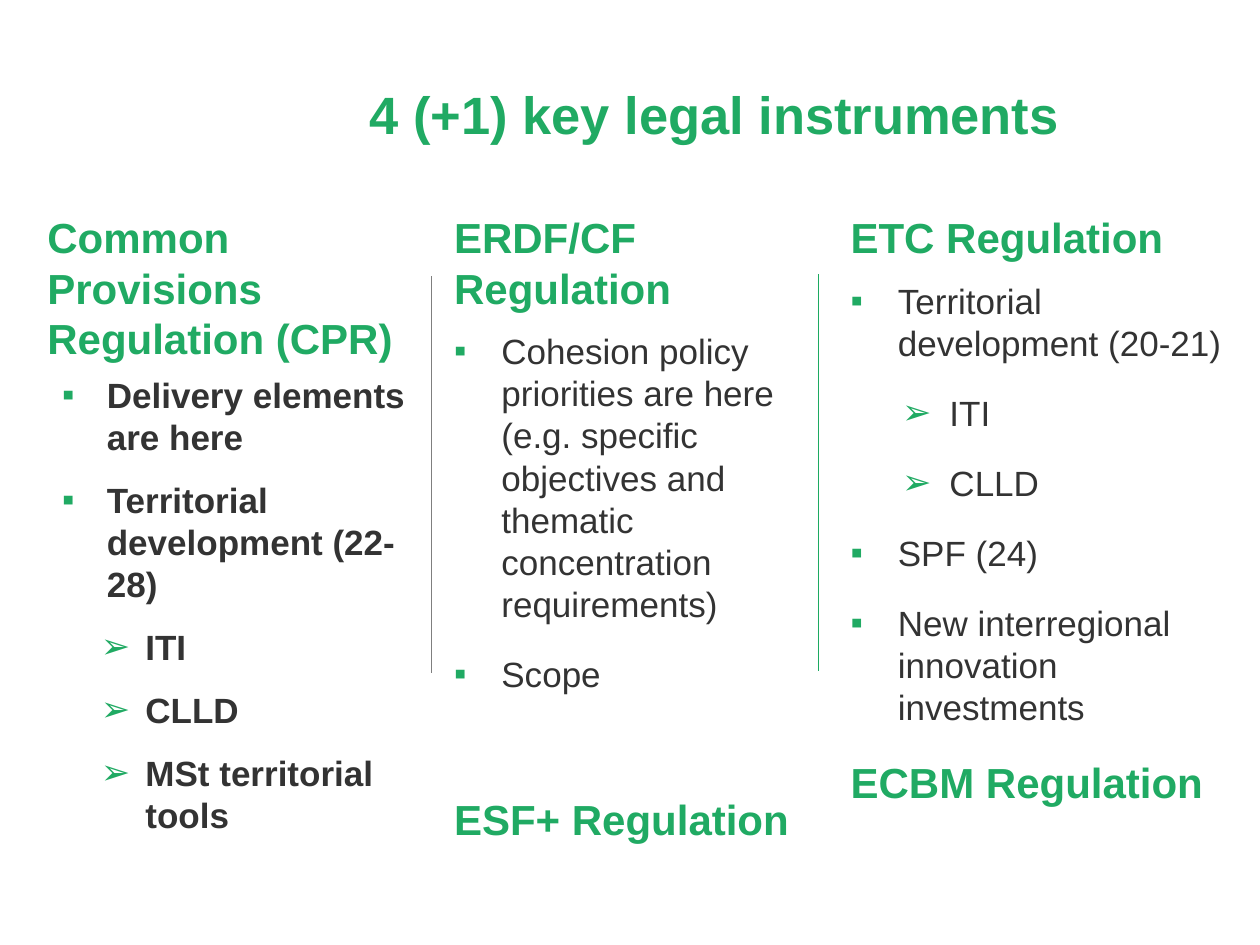
from lxml import etree
from pptx import Presentation
from pptx.dml.color import RGBColor
from pptx.enum.shapes import MSO_CONNECTOR
from pptx.enum.text import MSO_ANCHOR, MSO_AUTO_SIZE, PP_ALIGN
from pptx.oxml.ns import qn
from pptx.util import Pt

COLORS = {"title": "20AA63", "text": "333333", "rule": "1CAA61",
          "gray rule": "7F7F7F"}
FONT = "Arial"
BULLETS = {"item": "▪", "sub": "➢"}
# Left margin and hanging indent of each bullet level
INDENTS = {"item": (27, 27), "sub": (56.5, 27)}
BOLD_INDENTS = {"item": (34, 25.5), "sub": (56, 25.5)}

CPR = [
    ("head", "Common Provisions Regulation (CPR)"),
    ("item", "Delivery elements are here"),
    ("item", "Territorial development (22-28)"),
    ("sub", "ITI"),
    ("sub", "CLLD"),
    ("sub", "MSt territorial tools"),
]
ERDF = [
    ("head", "ERDF/CF Regulation"),
    ("item", "Cohesion policy priorities are here (e.g. specific objectives "
             "and thematic concentration requirements)"),
    ("item", "Scope"),
    ("head", "ESF+ Regulation"),
]
ETC = [
    ("head", "ETC Regulation"),
    ("item", "Territorial development (20-21)"),
    ("sub", "ITI"),
    ("sub", "CLLD"),
    ("item", "SPF (24)"),
    ("item", "New interregional innovation investments"),
    ("head", "ECBM Regulation"),
]


def rgb(name):
    return RGBColor.from_string(COLORS[name])


def set_font(p, size, color, bold):
    for r in p.runs:
        r.font.name = FONT
        r.font.size = Pt(size)
        r.font.bold = bold
        r.font.color.rgb = rgb(color)


def add_bullet(p, char, margin, hanging):
    pPr = p._p.get_or_add_pPr()
    pPr.set("marL", str(Pt(margin)))
    pPr.set("indent", str(-Pt(hanging)))
    color = etree.SubElement(pPr, qn("a:buClr"))
    etree.SubElement(color, qn("a:srgbClr")).set("val", COLORS["title"])
    etree.SubElement(pPr, qn("a:buFont")).set("typeface", FONT)
    etree.SubElement(pPr, qn("a:buChar")).set("char", char)


def add_title(s, text, x, y, w, h):
    sp = s.shapes.title
    sp.left, sp.top, sp.width, sp.height = Pt(x), Pt(y), Pt(w), Pt(h)
    tf = sp.text_frame
    tf.text = text
    tf.vertical_anchor = MSO_ANCHOR.TOP
    tf.auto_size = MSO_AUTO_SIZE.NONE
    tf.paragraphs[0].alignment = PP_ALIGN.CENTER
    set_font(tf.paragraphs[0], 30, "title", True)


def add_column(s, entries, x, y, w, h, bold=False, last_gap=4.8):
    """Headings with bulleted items; last_gap goes above a closing heading."""
    tf = s.shapes.add_textbox(Pt(x), Pt(y), Pt(w), Pt(h)).text_frame
    tf.word_wrap = True
    indents = BOLD_INDENTS if bold else INDENTS
    for i, (level, text) in enumerate(entries):
        p = tf.paragraphs[0] if i == 0 else tf.add_paragraph()
        p.text = text
        p.space_after = Pt(12 if i else 6)
        if level == "head":
            p.space_before = Pt(last_gap if i else 0)
            set_font(p, 24, "title", True)
        else:
            p.space_before = Pt(0 if bold else 4)
            add_bullet(p, BULLETS[level], *indents[level])
            set_font(p, 20, "text", bold)


def add_rule(s, x, y, h, color):
    line = s.shapes.add_connector(
        MSO_CONNECTOR.STRAIGHT, Pt(x), Pt(y), Pt(x), Pt(y + h))
    line.line.color.rgb = rgb(color)
    line.line.width = Pt(0.5)
    etree.SubElement(line._element.spPr, qn("a:effectLst"))


def main():
    prs = Presentation()
    prs.slide_width, prs.slide_height = Pt(720), Pt(540)
    s = prs.slides.add_slide(prs.slide_layouts[5])
    add_title(s, "4 (+1) key legal instruments", 132.5, 43.2, 551.5, 57)
    top = 117.4
    add_column(s, CPR, 20, top, 227, 385, bold=True)
    add_column(s, ERDF, 252.4, top, 212.5, 385, last_gap=44.8)
    add_column(s, ETC, 479, top, 227, 368.5)
    add_rule(s, 467.8, 156.8, 226.5, "rule")
    add_rule(s, 246.8, 158, 226.5, "gray rule")
    prs.save("out.pptx")


if __name__ == "__main__":
    main()
